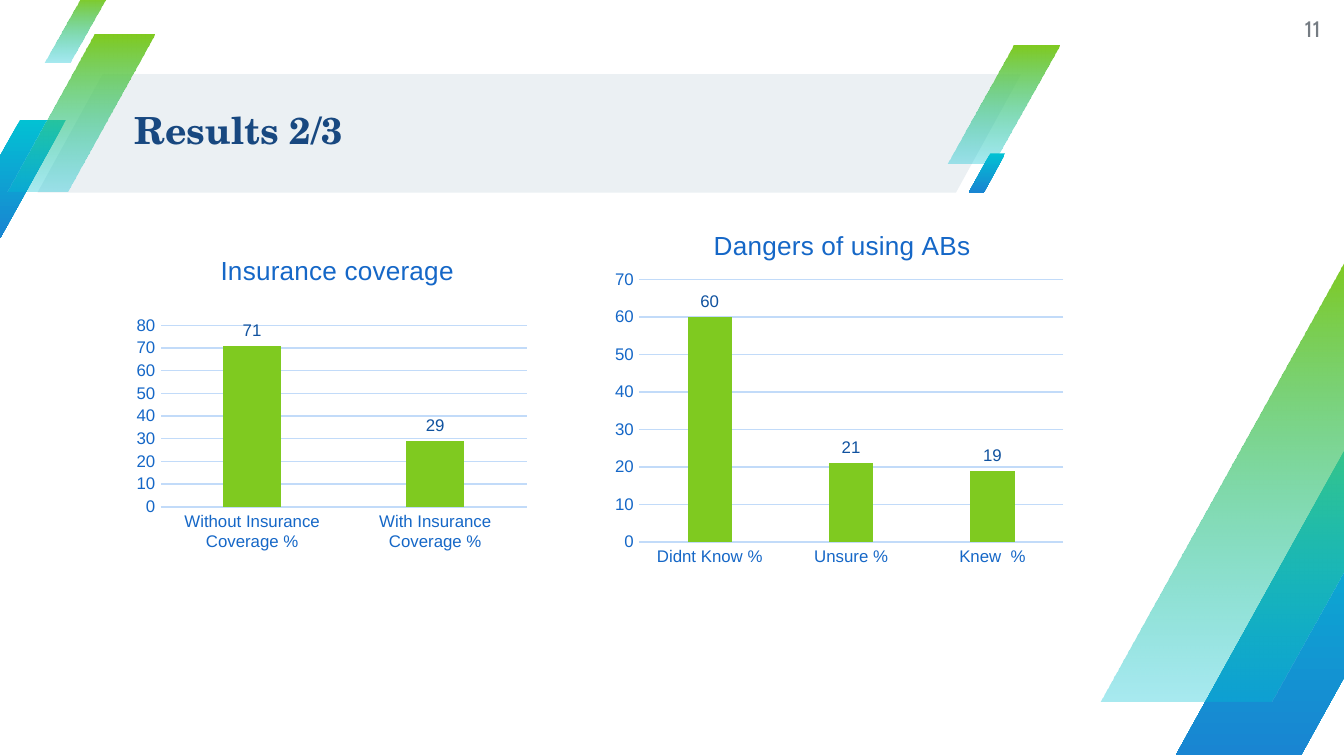
from dataclasses import dataclass

from lxml.etree import SubElement
from pptx import Presentation
from pptx.chart.data import CategoryChartData as ChartData
from pptx.dml.color import RGBColor as Rgb
from pptx.enum.chart import XL_CHART_TYPE as Kind, XL_LABEL_POSITION as Spot
from pptx.enum.chart import XL_TICK_MARK as Tick
from pptx.enum.shapes import MSO_SHAPE as Form
from pptx.enum.text import MSO_ANCHOR as Anchor, MSO_AUTO_SIZE as Auto, PP_ALIGN as Align
from pptx.oxml.ns import qn
from pptx.util import Cm, Pt


@dataclass(frozen=True)
class Theme:
    band: str = "EBF0F3"
    green: str = "7FCA20"
    cyan: str = "02C1D3"
    blue: str = "1985D2"
    head: str = "184880"
    page: str = "757C83"
    axis: str = "1567C7"
    label: str = "10529F"
    grid: str = "C2DBF9"
    serif: str = "TeX Gyre Schola"
    sans: str = "Arial"
    narrow: str = "Cabin"
    big: int = 20
    mid: int = 14
    base: int = 12
    small: int = 9


LOOK = Theme()
COOL = (LOOK.cyan, LOOK.blue, 100)
FRESH = (LOOK.green, LOOK.cyan, 34)

# Stripes from back to front: left, top, width, height, gradient
TOP = [
    (-0.86, 2.26, 2.11, 2.24, COOL),
    (17.91, 0.86, 2.11, 2.24, FRESH),
    (0.15, 0.66, 2.77, 2.97, FRESH),
    (0.84, -0.05, 1.17, 1.24, FRESH),
    (18.31, 2.9, 0.69, 0.74, COOL),
]
CORNER = [
    (22.22, 8.13, 5.77, 6.15, COOL),
    (20.8, 4.88, 7.87, 8.38, FRESH),
]


def put(item, **vals):
    for key, val in vals.items():
        setattr(item, key, val)


def style(font, size, face, tone, bold=False):
    put(font, size=Pt(size), name=face, bold=bold)
    font.color.rgb = Rgb.from_string(tone)


def slant(slide, box, lean):
    """Add a plain parallelogram."""
    shape = slide.shapes.add_shape(Form.PARALLELOGRAM, *map(Cm, box))
    shape.adjustments[0] = lean
    shape.shadow.inherit = False
    shape.line.fill.background()
    return shape


def stripe(slide, *box, tones):
    """Add a parallelogram that fades from top to bottom."""
    first, last, solid = tones
    shape = slant(slide, box, 0.59)
    fill = shape.fill
    fill.gradient()
    fill.gradient_angle = 270
    for stop, tone in zip(fill.gradient_stops, (first, last)):
        stop.color.rgb = Rgb.from_string(tone)
    if solid < 100:
        color = shape._element.xpath(".//a:gs[2]/a:srgbClr")[0]
        SubElement(color, qn("a:alpha"), val=str(solid * 1000))


def write(shape, box, text, align, *font):
    """Place a shape and give it one line of text."""
    put(shape, **dict(zip(("left", "top", "width", "height"), map(Cm, box))))
    frame = shape.text_frame
    put(frame, text=text, word_wrap=True, auto_size=Auto.NONE,
        vertical_anchor=Anchor.MIDDLE, margin_left=0, margin_right=0,
        margin_top=0, margin_bottom=0)
    line = frame.paragraphs[0]
    line.alignment = align
    style(line.runs[0].font, *font)
    return line


def place(part, before, **spots):
    """Fix the place of a chart part, in shares of the chart."""
    for old in part.findall(qn("c:layout")):
        part.remove(old)
    layout = part.makeelement(qn("c:layout"))
    part.insert(before, layout)
    manual = SubElement(layout, qn("c:manualLayout"))
    if "w" in spots:
        SubElement(manual, qn("c:layoutTarget"), val="inner")
    for side in ("x", "y"):
        SubElement(manual, qn(f"c:{side}Mode"), val="edge")
    for key, val in spots.items():
        SubElement(manual, qn(f"c:{key}"), val=str(val))


def columns(slide, box, title, data, top, plot, start):
    """Add a column chart with value labels."""
    table = ChartData(number_format="0")
    table.categories = list(data)
    table.add_series("Series 1", list(data.values()))
    chart = slide.shapes.add_chart(
        Kind.COLUMN_CLUSTERED, *map(Cm, box), table).chart
    chart.has_legend = False
    style(chart.font, LOOK.small, LOOK.sans, LOOK.axis)

    # Title and plot area
    chart.has_title = True
    head = chart.chart_title
    head.include_in_layout = False
    head.text_frame.text = title
    style(head.text_frame.paragraphs[0].runs[0].font,
          LOOK.mid, LOOK.sans, LOOK.axis)
    place(head._element, 1, **start)
    place(chart._chartSpace.chart.plotArea, 0, **plot)

    # Axes
    values, names = chart.value_axis, chart.category_axis
    for axis in (values, names):
        put(axis, major_tick_mark=Tick.NONE, minor_tick_mark=Tick.NONE)
        style(axis.tick_labels.font, LOOK.small, LOOK.sans, LOOK.axis)
    put(values, minimum_scale=0, maximum_scale=top, major_unit=10,
        has_major_gridlines=True)
    put(values.tick_labels, number_format="0", number_format_is_linked=False)
    values.format.line.fill.background()
    for line in (values.major_gridlines.format.line, names.format.line):
        line.color.rgb = Rgb.from_string(LOOK.grid)
        line.width = Pt(0.75)

    # Columns and labels
    bars = chart.plots[0]
    put(bars, gap_width=219, overlap=-27, vary_by_categories=False,
        has_data_labels=True)
    put(bars.data_labels, show_value=True, position=Spot.OUTSIDE_END,
        number_format="0", number_format_is_linked=False)
    style(bars.data_labels.font, LOOK.small, LOOK.sans, LOOK.label)
    fill = bars.series[0].format.fill
    fill.solid()
    fill.fore_color.rgb = Rgb.from_string(LOOK.green)


def main():
    deck = Presentation()
    put(deck, slide_width=Cm(25.4), slide_height=Cm(14.29))
    slide = deck.slides.add_slide(deck.slide_layouts[5])

    # Title band and stripes
    band = slant(slide, (0.71, 1.4, 18.59, 2.24), 0.55)
    band.fill.solid()
    band.fill.fore_color.rgb = Rgb.from_string(LOOK.band)
    for *box, tones in TOP + CORNER:
        stripe(slide, *box, tones=tones)

    # Page number
    box = (23.77, 0, 1.19, 1.09)
    page = slide.shapes.add_textbox(*map(Cm, box))
    write(page, box, "11", Align.RIGHT, LOOK.base, LOOK.narrow, LOOK.page)

    # Title, in front of its band
    title = slide.shapes.title
    line = write(title, (2.54, 1.37, 16.74, 2.26), "Results 2/3", Align.LEFT,
                 LOOK.big, LOOK.serif, LOOK.head, True)
    line.line_spacing = 0.9
    slide.shapes._spTree.append(title._element)

    # Charts
    columns(slide, (11.46, 3.89, 8.81, 6.99), "Dangers of using ABs",
            {"Didnt Know %": 60, "Unsure %": 21, "Knew  %": 19}, 70,
            dict(x=0.07, y=0.2, w=0.91, h=0.71), dict(x=0.22, y=0.05))
    columns(slide, (2.31, 4.37, 8.05, 6.86), "Insurance coverage",
            {"Without Insurance Coverage %": 71,
             "With Insurance Coverage %": 29}, 80,
            dict(x=0.09, y=0.26, w=0.86, h=0.5), dict(x=0.22, y=0.05))

    deck.save("out.pptx")


if __name__ == "__main__":
    main()
